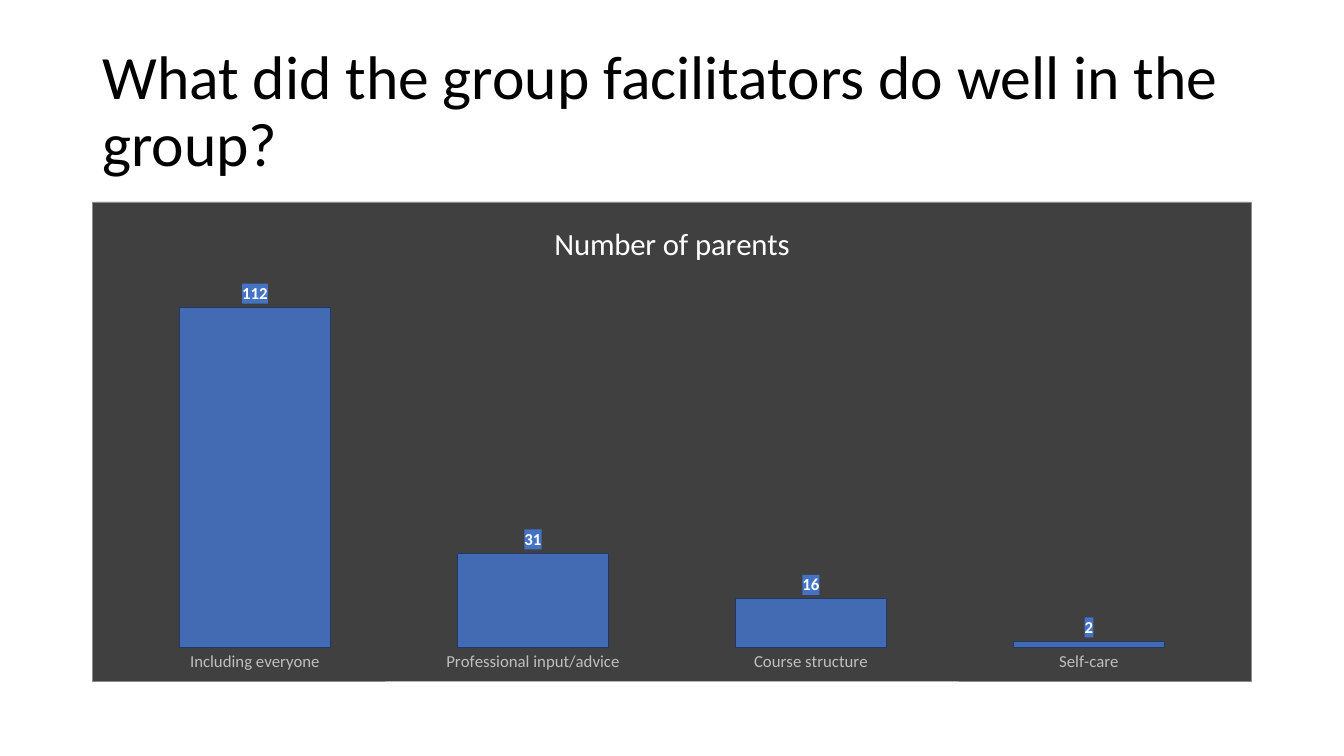
import lxml.etree
import pptx
import pptx.chart.data
import pptx.dml.color
import pptx.enum.chart
import pptx.enum.text
import pptx.oxml
import pptx.oxml.ns
import pptx.util
from pptx.util import Cm, Pt

RGBColor = pptx.dml.color.RGBColor
BLACK = RGBColor(0x00, 0x00, 0x00)
WHITE = RGBColor(0xFF, 0xFF, 0xFF)
BAR_BLUE = RGBColor(0x44, 0x72, 0xC4)
BAR_EDGE = RGBColor(0x20, 0x38, 0x64)
PANEL_GREY = RGBColor(0x40, 0x40, 0x40)
PANEL_EDGE = RGBColor(0x8C, 0x8C, 0x8C)
AXIS_GREY = RGBColor(0xBF, 0xBF, 0xBF)
FONT = "Calibri"
QUESTION = "What did the group facilitators do well in the group?"
MEASURE = "Number of parents"
ANSWERS = {
    "Including everyone": 112,
    "Professional input/advice": 31,
    "Course structure": 16,
    "Self-care": 2,
}


def style_font(font, size, color, bold=False):
    font.name = FONT
    font.size = Pt(size)
    font.bold = bold
    font.color.rgb = color


def shape_properties(fill, edge=None):
    line = (
        f'<a:ln w="{Pt(0.5)}"><a:solidFill><a:srgbClr val="{edge}"/></a:solidFill></a:ln>'
        if edge else "<a:ln><a:noFill/></a:ln>"
    )
    return pptx.oxml.parse_xml(
        f'<c:spPr {pptx.oxml.ns.nsdecls("c", "a")}>'
        f'<a:solidFill><a:srgbClr val="{fill}"/></a:solidFill>{line}</c:spPr>'
    )


def set_plot_layout(chart, left, top, width, height):
    plot_area = chart.element.xpath("c:chart/c:plotArea")[0]
    for layout in plot_area.xpath("c:layout"):
        plot_area.remove(layout)
    plot_area.insert(0, pptx.oxml.parse_xml(
        f'<c:layout {pptx.oxml.ns.nsdecls("c")}><c:manualLayout>'
        '<c:layoutTarget val="inner"/><c:xMode val="edge"/><c:yMode val="edge"/>'
        f'<c:x val="{left}"/><c:y val="{top}"/><c:w val="{width}"/><c:h val="{height}"/>'
        '</c:manualLayout></c:layout>'
    ))


def add_question(slide, left, top, width, height):
    box = slide.shapes.add_textbox(left, top, width, height)
    frame = box.text_frame
    frame.word_wrap = True
    frame.vertical_anchor = pptx.enum.text.MSO_ANCHOR.MIDDLE
    frame.text = QUESTION
    paragraph = frame.paragraphs[0]
    paragraph.line_spacing = 0.9
    style_font(paragraph.runs[0].font, 44, BLACK)


def add_answer_chart(slide, left, top, width, height):
    data = pptx.chart.data.CategoryChartData()
    data.categories = list(ANSWERS)
    data.add_series(MEASURE, list(ANSWERS.values()))
    chart = slide.shapes.add_chart(
        pptx.enum.chart.XL_CHART_TYPE.COLUMN_CLUSTERED, left, top, width, height, data
    ).chart
    style_font(chart.font, 10, BLACK)
    chart.element.xpath("c:chart")[0].addnext(shape_properties(PANEL_GREY, PANEL_EDGE))
    set_plot_layout(chart, 0.02, 0.17, 0.96, 0.76)

    chart.has_legend = False
    chart.has_title = True
    title = chart.chart_title
    title.include_in_layout = False
    title.text_frame.text = MEASURE
    style_font(title.text_frame.paragraphs[0].runs[0].font, 22, WHITE)

    category_axis = chart.category_axis
    category_axis.major_tick_mark = pptx.enum.chart.XL_TICK_MARK.NONE
    category_axis.format.line.fill.background()
    style_font(category_axis.tick_labels.font, 12, AXIS_GREY)
    value_axis = chart.value_axis
    value_axis.has_major_gridlines = False
    value_axis.minimum_scale = 0
    value_axis.maximum_scale = 120
    value_axis.visible = False

    plot = chart.plots[0]
    plot.gap_width = 84
    plot.vary_by_categories = False
    series = plot.series[0]
    series.format.fill.solid()
    series.format.fill.fore_color.rgb = BAR_BLUE
    series.format.line.color.rgb = BAR_EDGE
    series.format.line.width = Pt(0.75)
    bar_color = chart.element.xpath(".//c:ser/c:spPr/a:solidFill/a:srgbClr")[0]
    lxml.etree.SubElement(bar_color, pptx.oxml.ns.qn("a:alpha")).set("val", "88000")

    labels = series.data_labels
    labels.show_value = True
    labels.position = pptx.enum.chart.XL_LABEL_POSITION.OUTSIDE_END
    style_font(labels.font, 12, WHITE, bold=True)
    label_text = chart.element.xpath(".//c:ser/c:dLbls/c:txPr")[0]
    label_text.addprevious(shape_properties(BAR_BLUE))


def main():
    presentation = pptx.Presentation()
    presentation.slide_width = Cm(33.87)
    presentation.slide_height = Cm(19.05)
    slide = presentation.slides.add_slide(presentation.slide_layouts[6])
    margin = Cm(2.33)
    content_width = presentation.slide_width - 2 * margin
    add_question(slide, margin, Cm(1.01), content_width, Cm(3.68))
    add_answer_chart(slide, margin, Cm(5.08), content_width, Cm(12.09))
    presentation.save("out.pptx")


if __name__ == "__main__":
    main()
